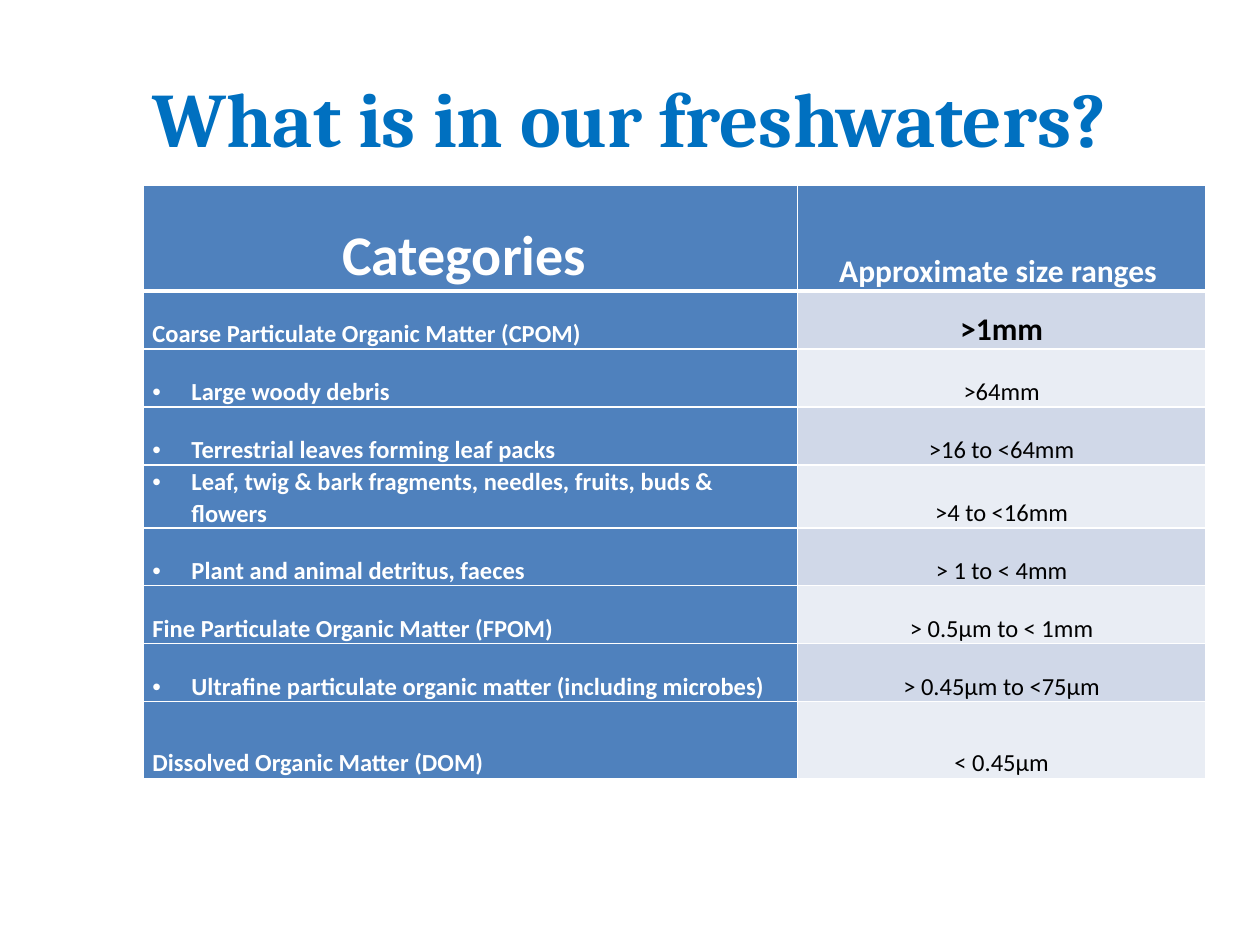
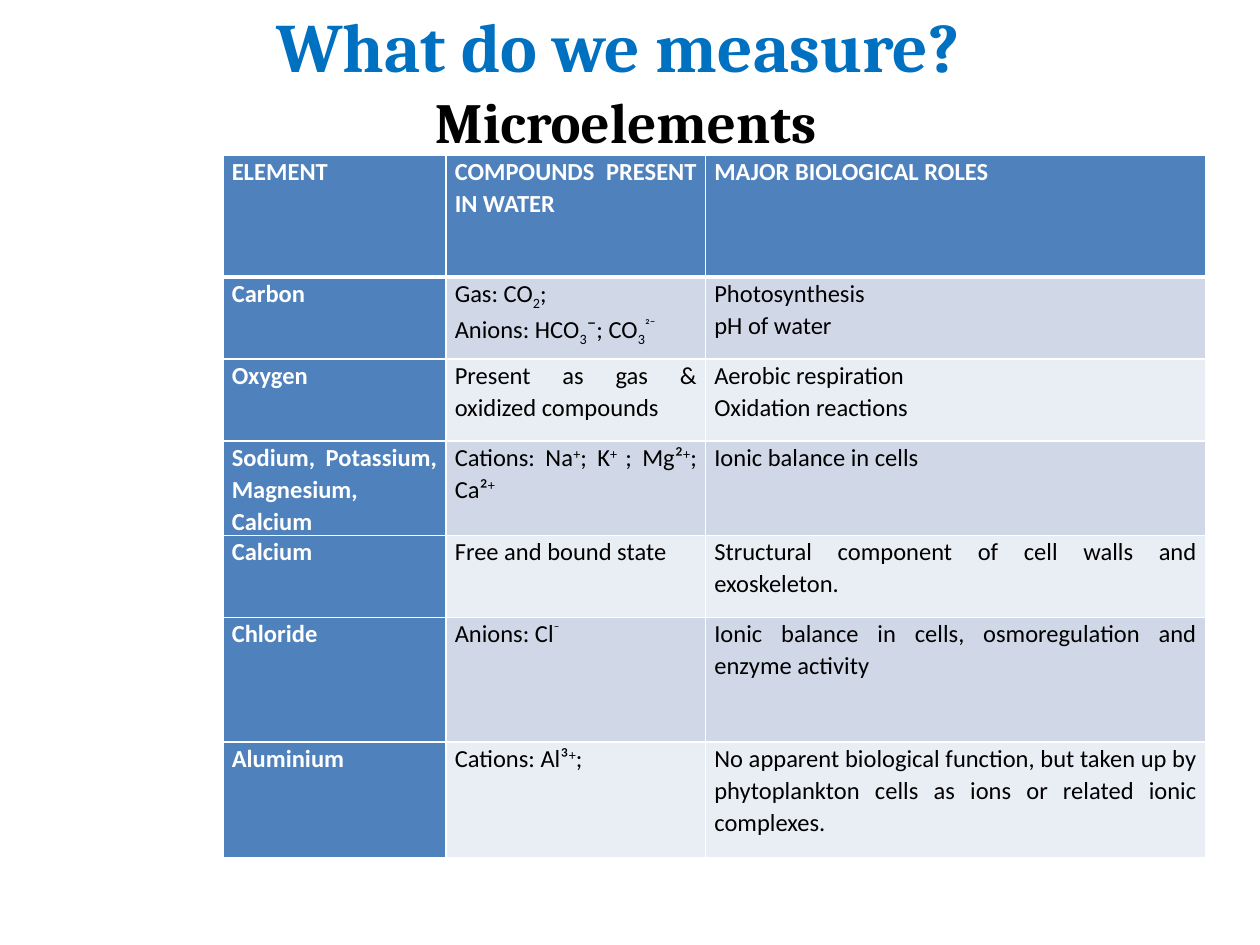
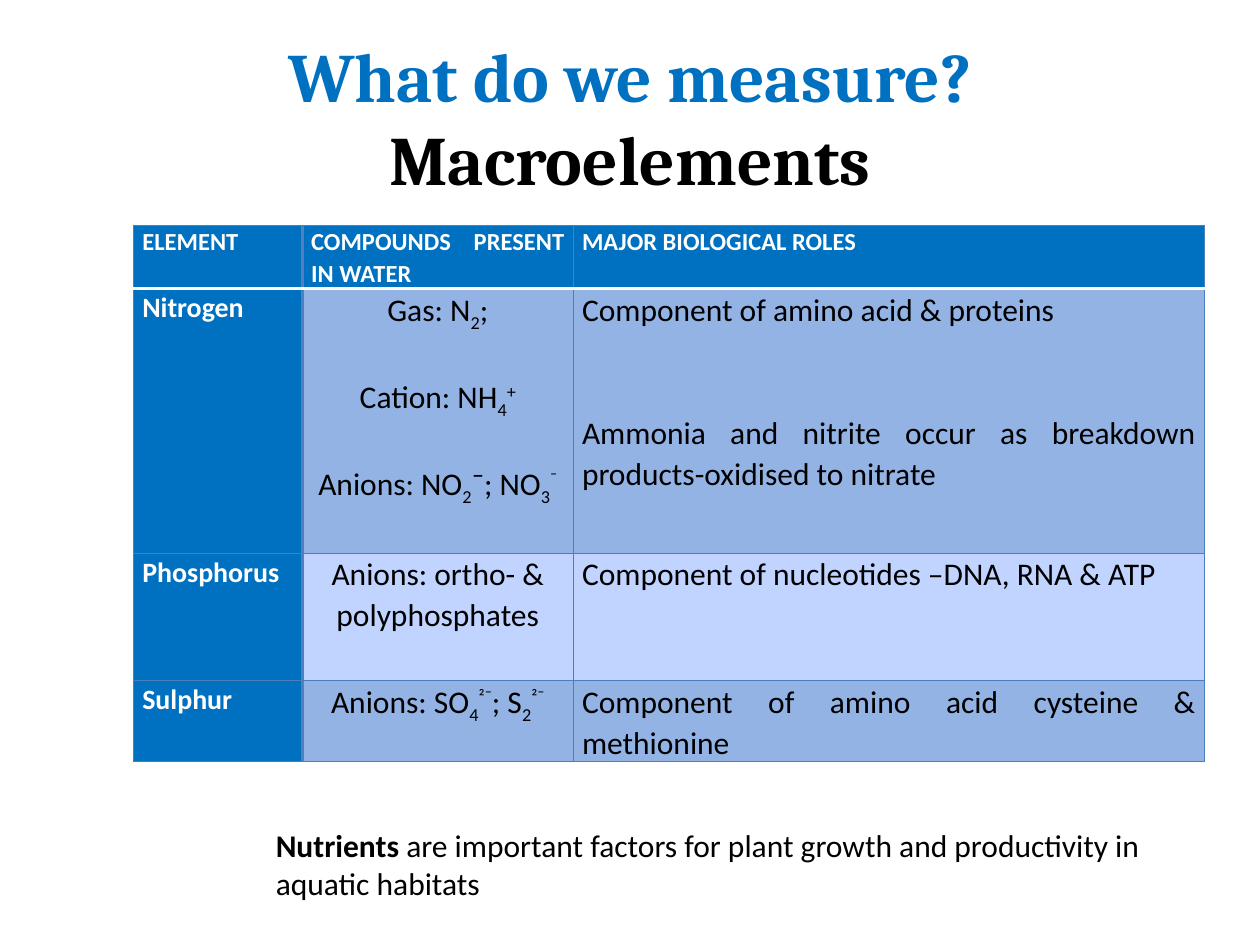
from lxml.etree import SubElement as Sub
from pptx import Presentation as Deck
from pptx.dml.color import RGBColor as Rgb
from pptx.enum.text import MSO_ANCHOR as Anchor, PP_ALIGN as Align
from pptx.oxml.ns import qn
from pptx.util import Inches, Pt

BLUE, STEEL, WHITE, BLACK = "0070C0", "4F81BD", "FFFFFF", "000000"
EDGE = "4B7EBC"
PALE = ("D0D8E8", "E9EDF4")
SKY = ("93B3E5", "C0D4FF")
BASE = {"_": "-25000", "^": "30000"}
LEFT, MID, JUST = Align.LEFT, Align.CENTER, Align.JUSTIFY


def tint(color):
    """Turn a hex string into a colour."""
    return Rgb.from_string(color)


class Show:
    """Hold the deck style and the current slide."""

    def __init__(self):
        """Start an empty 10 by 7.5 inch deck."""
        self.deck = Deck()
        self.deck.slide_width, self.deck.slide_height = Inches(10), Inches(7.5)

    def page(self):
        """Begin a new blank slide."""
        self.slide = self.deck.slides.add_slide(self.deck.slide_layouts[6])

    def font(self, run, size, color, bold, face="Calibri"):
        """Style one run."""
        font = run.font
        font.size, font.bold, font.name = Pt(size), bold, face
        font.color.rgb = tint(color)

    def box(self, place):
        """Add a wrapping text box and return its frame."""
        shape = self.slide.shapes.add_textbox(*map(Inches, place))
        shape.text_frame.word_wrap = True
        return shape.text_frame

    def title(self, place, text, sizes):
        """Add a title whose second line is black."""
        frame = self.box(place)
        frame.vertical_anchor = Anchor.MIDDLE
        par = frame.paragraphs[0]
        par.text, par.alignment = text, MID
        for run, size, color in zip(par.runs, sizes, (BLUE, BLACK)):
            self.font(run, size, color, True, "Cambria")

    def words(self, par, text, size, color, bold=False):
        """Fill a paragraph; parts split by | may be _sub, ^super or *bold."""
        for part in text.split("|"):
            mark = part[0] if part[0] in "_^*" else ""
            run = par.add_run()
            run.text = part[len(mark):]
            self.font(run, size, color, bold or mark == "*")
            if mark in BASE:
                run._r.get_or_add_rPr().set("baseline", BASE[mark])

    def bullet(self, par):
        """Give a paragraph a hanging round bullet."""
        props = par._p.get_or_add_pPr()
        props.set("marL", str(Inches(0.31)))
        props.set("indent", str(-Inches(0.31)))
        Sub(props, qn("a:buFont"), typeface="Arial")
        Sub(props, qn("a:buChar"), char="•")

    def lines(self, cell, edges):
        """Draw the left, right, top and bottom borders of a cell."""
        for side, (color, width) in zip("LRTB", edges):
            line = Sub(cell._tc.get_or_add_tcPr(), qn("a:ln" + side), w=str(Pt(width)))
            fill = Sub(line, qn("a:solidFill"))
            Sub(fill, qn("a:srgbClr"), val=color)

    def cell(self, cell, text, size, color, bold, align, gap=0):
        """Fill a cell, one paragraph a line."""
        cell.margin_left = cell.margin_right = Inches(0.07)
        cell.margin_top = cell.margin_bottom = 0
        frame = cell.text_frame
        for num, line in enumerate(text.split("\n")):
            par = frame.add_paragraph() if num else frame.paragraphs[0]
            if line.startswith("• "):
                self.bullet(par)
            par.alignment, par.line_spacing = align, 1.07
            if num and gap:
                par.space_before = Pt(gap)
            self.words(par, line.removeprefix("• "), size, color, bold)

    def table(self, place, cols, rows, data, aligns, sizes, heads, tops,
              dark=STEEL, bands=PALE, thin=(WHITE, 1), side=(WHITE, 1),
              rule=(WHITE, 3), gaps=(0, 0, 0), anchor=Anchor.TOP):
        """Add a table with a dark header row and first column."""
        spot = (*place, sum(cols), sum(rows))
        grid = self.slide.shapes.add_table(len(rows), len(cols), *map(Inches, spot)).table
        grid.horz_banding = False
        for col, width in zip(grid.columns, cols):
            col.width = Inches(width)
        for row, height in zip(grid.rows, rows):
            row.height = Inches(height)
        for r, texts in enumerate(data):
            for c, text in enumerate(texts):
                cell = grid.cell(r, c)
                deep = r == 0 or c == 0
                self.cell(cell, text, sizes[c] if r else heads[c],
                          WHITE if deep else BLACK, deep,
                          aligns[c] if r else tops[c], gaps[c])
                cell.vertical_anchor = anchor
                self.lines(cell, (side if c == 1 else thin, side if c == 0 else thin,
                                  rule if r == 1 else thin, rule if r == 0 else thin))
                cell.fill.solid()
                cell.fill.fore_color.rgb = tint(dark if deep else bands[(r - 1) % 2])
        return grid

    def note(self, place, text):
        """Add a plain note."""
        self.words(self.box(place).paragraphs[0], text, 18, BLACK)


SIZES = [
    ("Categories ", "Approximate size ranges "),
    ("Coarse Particulate Organic Matter (CPOM)", "*>1mm"),
    ("• Large woody debris", ">64mm"),
    ("• Terrestrial leaves forming leaf packs", ">16 to <64mm"),
    ("• Leaf, twig & bark fragments, needles, fruits, buds & flowers", ">4 to <16mm"),
    ("• Plant and animal detritus, faeces", "> 1 to < 4mm"),
    ("Fine Particulate Organic Matter (FPOM)", "> 0.5µm to < 1mm"),
    ("• Ultrafine particulate organic matter (including microbes)", "> 0.45µm to <75µm"),
    ("Dissolved Organic Matter (DOM)", "< 0.45µm"),
]
HEAD = ("ELEMENT", "COMPOUNDS PRESENT IN WATER", "MAJOR BIOLOGICAL ROLES")
MICRO = [
    HEAD,
    ("Carbon", "Gas: CO|_2|;\nAnions: HCO|_3|¯; CO|_3|^²¯", "Photosynthesis\npH of water"),
    ("Oxygen", "Present as gas & oxidized compounds", "Aerobic respiration\nOxidation reactions"),
    ("Sodium, Potassium, Magnesium, Calcium",
     "Cations: Na|^+|; K|^+ |; Mg²|^+|; Ca²|^+", "Ionic balance in cells"),
    ("Calcium", "Free and bound state", "Structural component of cell walls and exoskeleton."),
    ("Chloride", "Anions: Cl|^¯", "Ionic balance in cells, osmoregulation and enzyme activity"),
    ("Aluminium", "Cations: Al³|^+|;",
     "No apparent biological function, but taken up by phytoplankton cells as ions "
     "or related ionic complexes."),
]
MACRO = [
    HEAD,
    ("Nitrogen", "Gas: N|_2|;\nCation: NH|_4|^+\nAnions: NO|_2|¯; NO|_3|^¯",
     "Component of amino acid & proteins\n"
     "Ammonia and nitrite occur as breakdown products-oxidised to nitrate"),
    ("Phosphorus", "Anions: ortho- & polyphosphates", "Component of nucleotides –DNA, RNA & ATP"),
    ("Sulphur", "Anions: SO|_4|^²¯|; S|_2|^²¯", "Component of amino acid cysteine & methionine"),
]


def main():
    """Build the three slides."""
    show = Show()

    show.page()
    show.title((0.5, 0.3, 9, 1.25), "What is in our freshwaters?", (44,))
    grid = show.table((1.14, 1.47), (5.19, 3.24), (0.84, *[0.46] * 7, 0.61), SIZES,
                      (LEFT, MID), (14, 14), (32, 18), (MID, MID), anchor=Anchor.BOTTOM)
    grid.cell(1, 1).text_frame.paragraphs[0].runs[0].font.size = Pt(18)

    show.page()
    show.title((0.12, 0, 9.69, 1.25), "What do we measure? \vMicroelements", (39.6, 32.4))
    show.table((1.77, 1.23), (1.77, 2.06, 3.97), (0.97, *[0.65] * 4, 0.99, 0.92), MICRO,
               [JUST] * 3, [14] * 3, [14] * 3, [JUST] * 3)

    show.page()
    show.title((0.5, 0.3, 9, 1.25), "What do we measure?\vMacroelements", (39.6, 39.6))
    show.table((1.06, 1.79), (1.34, 2.15, 5.01), (0.44, 2.1, 1.01, 0.22), MACRO,
               (JUST, MID, JUST), (16, 18, 18), [14] * 3, [JUST] * 3,
               dark=BLUE, bands=SKY, thin=(EDGE, 0.75), side=(STEEL, 2),
               rule=(WHITE, 2), gaps=(0, 23.5, 47))
    show.note((2.09, 6.51, 7.32, 0.71),
              "*Nutrients| are important factors for plant growth and productivity in aquatic habitats")

    show.deck.save("out.pptx")


if __name__ == "__main__":
    main()
